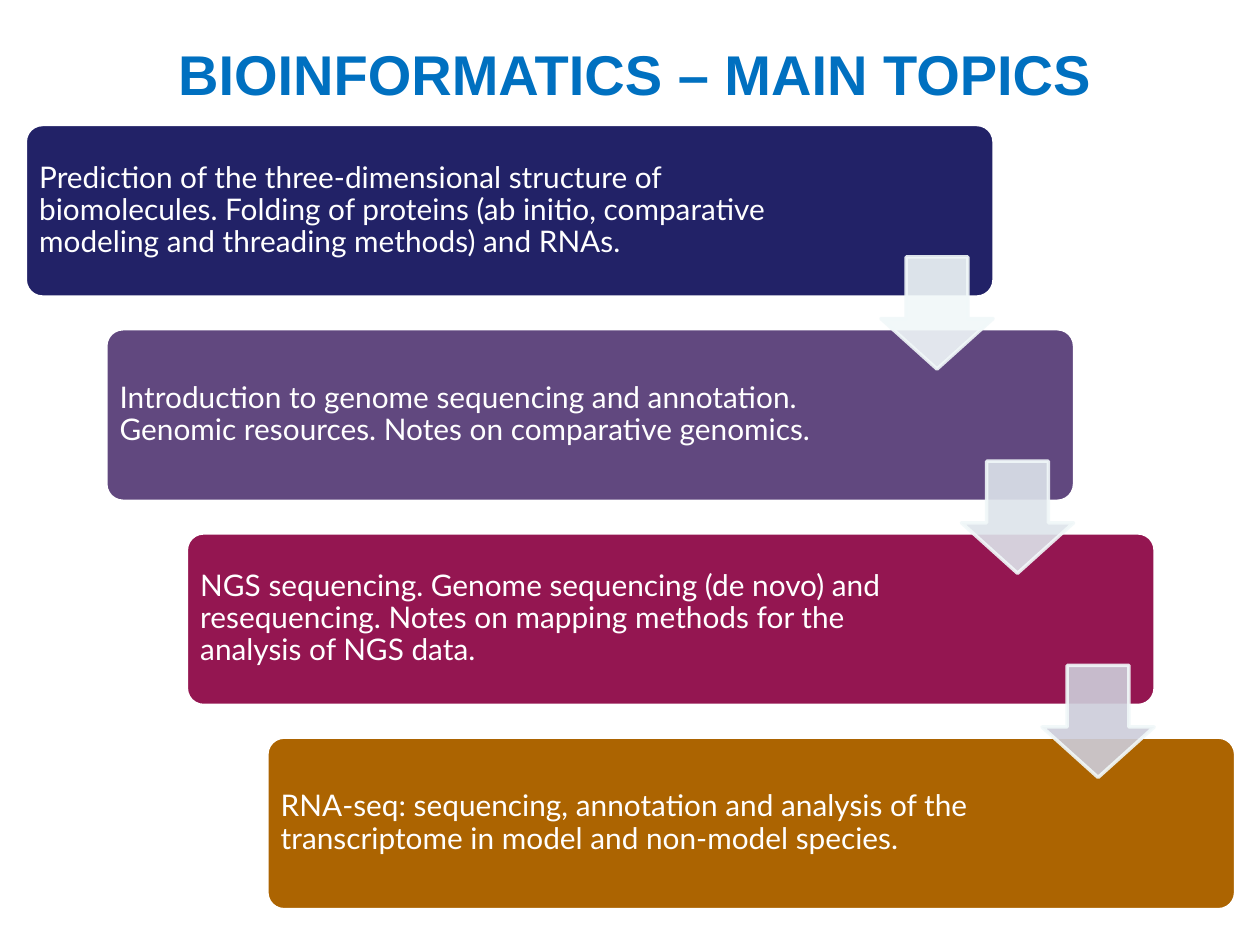
from collections import namedtuple
from dataclasses import dataclass

from lxml import etree
from pptx import Presentation
from pptx import util as u
from pptx.dml import color
from pptx.enum import shapes, text
from pptx.oxml import ns

Cm, Pt = u.Cm, u.Pt
Box = namedtuple("Box", "x y w h")


@dataclass(frozen=True)
class Theme:
    head: str = "0070C0"
    ink: str = "FFFFFF"
    edge: str = "F1F8F9"
    cards: tuple = ("222267", "61487F", "941651", "AC6401")
    arrows: tuple = ("F1F8F9", "DDE4EB", "CDCDDA")
    alpha: int = 90
    title: int = 32
    body: int = 17
    line: int = 2
    sans: str = "Arial"
    lato: str = "Lato"


THEME = Theme()
TOPICS = (
    "Prediction of the three-dimensional structure of biomolecules. "
    "Folding of proteins (ab initio, comparative modeling and threading "
    "methods) and RNAs.",
    "Introduction to genome sequencing and annotation. Genomic resources. "
    "Notes on comparative genomics.",
    "NGS sequencing. Genome sequencing (de novo) and resequencing. "
    "Notes on mapping methods for the analysis of NGS data.",
    "RNA-seq: sequencing, annotation and analysis of the transcriptome "
    "in model and non-model species.",
)


def rgb(code):
    return color.RGBColor.from_string(code)


def add_run(para, words, face, size, ink, bold=False):
    run = para.add_run()
    run.text = words
    run.font.name = face
    run.font.size = Pt(size)
    run.font.bold = bold
    run.font.color.rgb = rgb(ink)


def fade(shape):
    for node in shape._element.spPr.iter(ns.qn("a:srgbClr")):
        alpha = etree.SubElement(node, ns.qn("a:alpha"))
        alpha.set("val", str(THEME.alpha * 1000))


def add_form(group, kind, box, fill, edge, ratios):
    form = group.shapes.add_shape(kind, *map(Cm, box))
    form.shadow.inherit = False
    form.fill.solid()
    form.fill.fore_color.rgb = rgb(fill)
    form.line.color.rgb = rgb(edge)
    form.line.width = Pt(THEME.line)
    for i, ratio in enumerate(ratios):
        form.adjustments[i] = ratio
    return form


def add_card(group, box, words, fill):
    add_form(group, shapes.MSO_SHAPE.ROUNDED_RECTANGLE, box, fill,
             THEME.ink, [0.1])
    pad = 0.1
    label = group.shapes.add_textbox(
        Cm(box.x + pad), Cm(box.y + pad), Cm(15.44), Cm(box.h - 2 * pad))
    frame = label.text_frame
    frame.word_wrap = True
    frame.vertical_anchor = text.MSO_ANCHOR.MIDDLE
    frame.margin_left = frame.margin_right = Cm(0.18)
    frame.margin_top = frame.margin_bottom = Cm(0.18)
    para = frame.paragraphs[0]
    para.line_spacing = 0.9
    add_run(para, words, THEME.lato, THEME.body, THEME.ink)


def add_arrow(group, card, fill):
    side = 2.26
    box = Box(card.x + 17.25, card.y + 2.67, side, side)
    arrow = add_form(group, shapes.MSO_SHAPE.DOWN_ARROW, box, fill,
                     THEME.edge, [0.55, 0.45])
    fade(arrow)


def add_steps(slide, box):
    group = slide.shapes.add_group_shape()
    wide, high = 19.53, 3.48
    gaps = len(TOPICS) - 1
    right, down = (box.w - wide) / gaps, (box.h - high) / gaps
    cards = [Box(box.x + i * right, box.y + i * down, wide, high)
             for i in range(len(TOPICS))]
    for card, words, fill in zip(cards, TOPICS, THEME.cards):
        add_card(group, card, words, fill)
    for card, fill in zip(cards, THEME.arrows):
        add_arrow(group, card, fill)


def add_title(slide, box):
    title = slide.shapes.title
    title.left, title.top, title.width, title.height = map(Cm, box)
    frame = title.text_frame
    frame.word_wrap = True
    frame.auto_size = text.MSO_AUTO_SIZE.NONE
    frame.vertical_anchor = text.MSO_ANCHOR.TOP
    para = frame.paragraphs[0]
    para.alignment = text.PP_ALIGN.CENTER
    add_run(para, "BIOINFORMATICS – MAIN TOPICS", THEME.sans, THEME.title,
            THEME.head, True)


def main():
    deck = Presentation()
    deck.slide_width, deck.slide_height = Cm(25.4), Cm(19.05)
    slide = deck.slides.add_slide(deck.slide_layouts[5])
    add_steps(slide, Box(0.51, 2.51, 24.4, 15.83))
    add_title(slide, Box(0.1, 0.66, 25.4, 2.06))
    deck.save("out.pptx")


if __name__ == "__main__":
    main()
